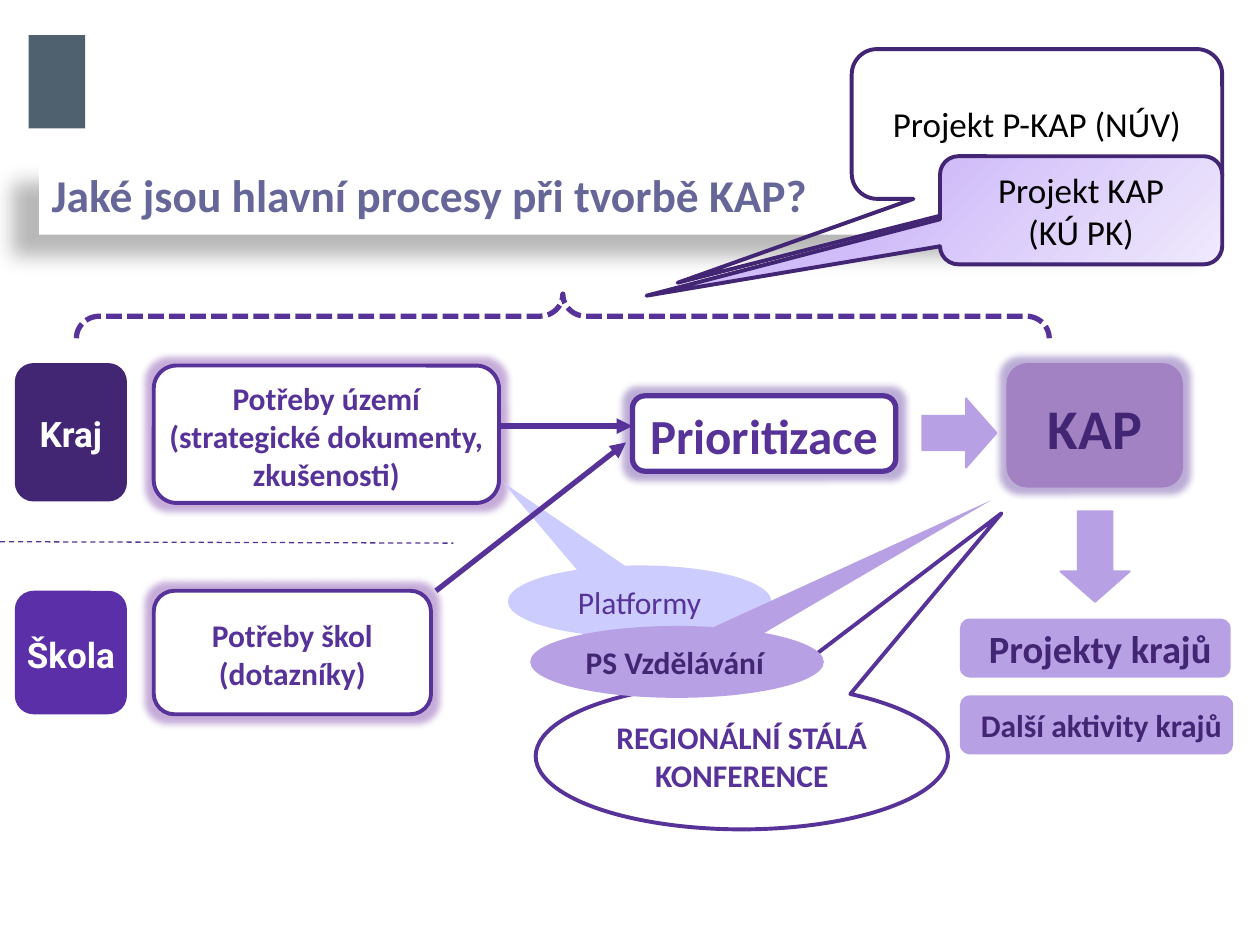
from dataclasses import dataclass, field
from typing import Optional

from lxml import etree
from pptx import Presentation
from pptx import util as u
from pptx.dml.color import RGBColor
from pptx.enum import dml, shapes, text
from pptx.oxml.ns import qn

COLORS = {
    "white": "FFFFFF", "black": "000000", "violet": "573399", "dark": "422674",
    "school": "5A2FA7", "lilac": "B8A0E4", "platform": "CCCCFF", "title": "666699",
    "plum": "7030A0", "logo": "4F606E", "pale_from": "D0BCF9", "pale_to": "EFE9FD",
}
KINDS = shapes.MSO_SHAPE
MIDDLE, TOP = text.MSO_ANCHOR.MIDDLE, text.MSO_ANCHOR.TOP
CENTER, LEFT = text.PP_ALIGN.CENTER, text.PP_ALIGN.LEFT
TIGHT = (0, 0.1, 0, 0.03)
INDENTED = (0.2, 0, 0, 0)


@dataclass
class Label:
    """Wording of a shape and its format."""
    words: str
    size: float
    color: str
    bold: bool = True
    font: str = "Calibri"
    align: text.PP_ALIGN = CENTER
    anchor: text.MSO_ANCHOR = MIDDLE
    insets: tuple = (0.25, 0.13, 0.25, 0.13)


@dataclass
class Box:
    """Preset shape, placed in centimetres."""
    kind: shapes.MSO_SHAPE
    place: tuple
    fill: Optional[str] = None
    line: Optional[str] = None
    width: float = 2.25
    label: Optional[Label] = None
    adjust: tuple = ()
    rotation: float = 0
    alpha: Optional[int] = None
    fade_to: Optional[str] = None
    dash: Optional[dml.MSO_LINE] = None
    effect: Optional[tuple] = None


@dataclass
class Link:
    """Straight line between two points in centimetres."""
    start: tuple
    end: tuple
    width: float = 3
    arrow: bool = True
    dash: Optional[dml.MSO_LINE] = field(default=None)


def rgb(name: str) -> RGBColor:
    """Return the named colour."""
    return RGBColor.from_string(COLORS[name])


def apply(target, values: dict) -> None:
    """Set every attribute listed in values."""
    for key, value in values.items():
        setattr(target, key, value)


def add_effect(properties, kind: str, color: str, alpha: int, **settings) -> None:
    """Put a glow or a shadow into the effect list."""
    effects = properties.find(qn("a:effectLst"))
    effect = etree.SubElement(effects, qn(f"a:{kind}"), {k: str(v) for k, v in settings.items()})
    tint = etree.SubElement(effect, qn("a:srgbClr"), val=COLORS[color])
    etree.SubElement(tint, qn("a:alpha"), val=str(alpha * 1000))


def paint(shape, box: Box) -> None:
    """Set fill and outline of a shape."""
    if box.fade_to:
        shape.fill.gradient()
        shape.fill.gradient_angle = 315
        for stop, name in zip(shape.fill.gradient_stops, (box.fill, box.fade_to)):
            stop.color.rgb = rgb(name)
    elif box.fill:
        shape.fill.solid()
        shape.fill.fore_color.rgb = rgb(box.fill)
    else:
        shape.fill.background()
    if box.alpha:
        tint = shape.fill._xPr.find(f"{qn('a:solidFill')}/{qn('a:srgbClr')}")
        etree.SubElement(tint, qn("a:alpha"), val=str(box.alpha * 1000))
    if box.line:
        shape.line.color.rgb = rgb(box.line)
        apply(shape.line, {"width": u.Pt(box.width), "dash_style": box.dash})
    else:
        shape.line.fill.background()


def write(shape, label: Label) -> None:
    """Write a label into a shape."""
    sides = ("margin_left", "margin_top", "margin_right", "margin_bottom")
    frame = shape.text_frame
    apply(frame, {"word_wrap": True, "vertical_anchor": label.anchor})
    apply(frame, dict(zip(sides, map(u.Cm, label.insets))))
    paragraph = frame.paragraphs[0]
    paragraph.text = label.words
    paragraph.alignment = label.align
    for run in paragraph.runs:
        apply(run.font, {"name": label.font, "size": u.Pt(label.size), "bold": label.bold})
        run.font.color.rgb = rgb(label.color)


def draw_box(slide, box: Box) -> None:
    """Draw one preset shape."""
    shape = slide.shapes.add_shape(box.kind, *map(u.Cm, box.place))
    shape.shadow.inherit = False
    shape.rotation = box.rotation
    for index, value in enumerate(box.adjust):
        shape.adjustments[index] = value
    paint(shape, box)
    if box.effect:
        kind, color, alpha, settings = box.effect
        add_effect(shape._element.spPr, kind, color, alpha, **settings)
    if box.label:
        write(shape, box.label)


def draw_link(slide, link: Link) -> None:
    """Draw one line, with an arrowhead if wanted."""
    line = slide.shapes.add_connector(
        shapes.MSO_CONNECTOR.STRAIGHT, *map(u.Cm, link.start + link.end))
    line.line.color.rgb = rgb("violet")
    apply(line.line, {"width": u.Pt(link.width), "dash_style": link.dash})
    if link.arrow:
        etree.SubElement(line.line._get_or_add_ln(), qn("a:tailEnd"), type="triangle")
    etree.SubElement(line._element.spPr, qn("a:effectLst"))


def glow(color: str) -> tuple:
    """Return the soft halo used around the main steps."""
    return "glow", color, 40, {"rad": u.Pt(8)}


ROUND, ELLIPSE = KINDS.ROUNDED_RECTANGLE, KINDS.OVAL_CALLOUT
BUBBLE, ARROW = KINDS.ROUNDED_RECTANGULAR_CALLOUT, KINDS.RIGHT_ARROW
TITLE_SHADOW = ("outerShdw", "black", 28, {
    "blurRad": u.Pt(11.8), "dist": u.Pt(19.7), "dir": 141 * 60000, "algn": "ctr", "rotWithShape": 0})

BOXES = [
    Box(KINDS.RECTANGLE, (0.58, 0.71, 1.14, 1.88), "logo"),
    Box(KINDS.RECTANGLE, (0.79, 3.23, 23.9, 1.5), "white", effect=TITLE_SHADOW,
        label=Label("Jaké jsou hlavní procesy při tvorbě KAP?", 26, "title", align=LEFT, anchor=TOP)),
    Box(ROUND, (12.75, 7.98, 5.31, 1.52), "white", "violet", 3, effect=glow("violet"),
        label=Label("Prioritizace", 28, "violet", insets=TIGHT)),
    Box(ROUND, (0.3, 7.32, 2.26, 2.79), "dark",
        label=Label("Kraj", 20, "white", font="Roboto", insets=TIGHT)),
    Box(ROUND, (0.3, 11.91, 2.26, 2.49), "school",
        label=Label("Škola", 20, "white", font="Roboto", insets=TIGHT)),
    Box(ROUND, (3.1, 11.91, 5.59, 2.49), "white", "violet", effect=glow("plum"),
        label=Label("Potřeby škol\n(dotazníky)", 18, "violet", insets=TIGHT)),
    Box(ROUND, (20.29, 7.32, 3.56, 2.51), "plum", alpha=34, effect=glow("violet"),
        label=Label("KAP", 32, "dark", insets=TIGHT)),
    Box(ROUND, (19.35, 12.47, 5.46, 1.19), "lilac",
        label=Label("Projekty krajů", 22, "dark", insets=INDENTED)),
    Box(ROUND, (19.35, 14.02, 5.51, 1.19), "lilac",
        label=Label("Další aktivity krajů", 18, "dark", insets=INDENTED)),
    Box(ARROW, (21.16, 10.52, 1.83, 1.4), "lilac", "lilac", 1, adjust=(0.5, 0.44), rotation=90),
    Box(ARROW, (18.59, 8.03, 1.5, 1.4), "lilac", "lilac", 1, adjust=(0.5, 0.44)),
    Box(ROUND, (3.1, 7.37, 6.96, 2.77), "white", "violet", effect=glow("plum"),
        label=Label("Potřeby území\n(strategické dokumenty, zkušenosti)", 18, "violet", insets=TIGHT)),
    Box(ELLIPSE, (10.24, 11.4, 5.31, 1.45), "platform", adjust=(-0.52, -1.66),
        label=Label("Platformy", 18, "violet", bold=False)),
    Box(ELLIPSE, (10.8, 13.77, 8.31, 2.95), None, "violet", adjust=(0.63, -1.66),
        label=Label("REGIONÁLNÍ STÁLÁ KONFERENCE", 18, "violet")),
    Box(ELLIPSE, (10.69, 12.62, 5.92, 1.45), "lilac", adjust=(1.07, -2.25),
        label=Label("PS Vzdělávání", 18, "dark", align=LEFT)),
    Box(BUBBLE, (17.17, 0.99, 7.47, 3.02), None, "dark", adjust=(-0.97, 1.06, 0.17),
        label=Label("Projekt P-KAP (NÚV)", 20, "black", bold=False)),
    Box(BUBBLE, (18.95, 3.15, 5.69, 2.18), "pale_from", "dark", fade_to="pale_to",
        adjust=(-1.54, 0.79, 0.17),
        label=Label("Projekt KAP\n(KÚ PK)", 20, "black", bold=False)),
    Box(KINDS.LEFT_BRACE, (10.9, -3.43, 0.89, 19.61), None, "violet", 3,
        adjust=(0.52, 0.5), rotation=90, dash=dml.MSO_LINE.SQUARE_DOT),
]
LINKS = [
    Link((0, 10.92), (9.14, 10.95), 0.75, False, dml.MSO_LINE.DASH),
    Link((10.06, 8.59), (12.75, 8.59)),
    Link((8.79, 11.91), (12.62, 8.92)),
]


def main() -> None:
    """Build the slide and save it."""
    deck = Presentation()
    apply(deck, {"slide_width": u.Cm(25.4), "slide_height": u.Cm(19.05)})
    slide = deck.slides.add_slide(deck.slide_layouts[6])
    for box in BOXES:
        draw_box(slide, box)
    for link in LINKS:
        draw_link(slide, link)
    deck.save("out.pptx")


if __name__ == "__main__":
    main()
